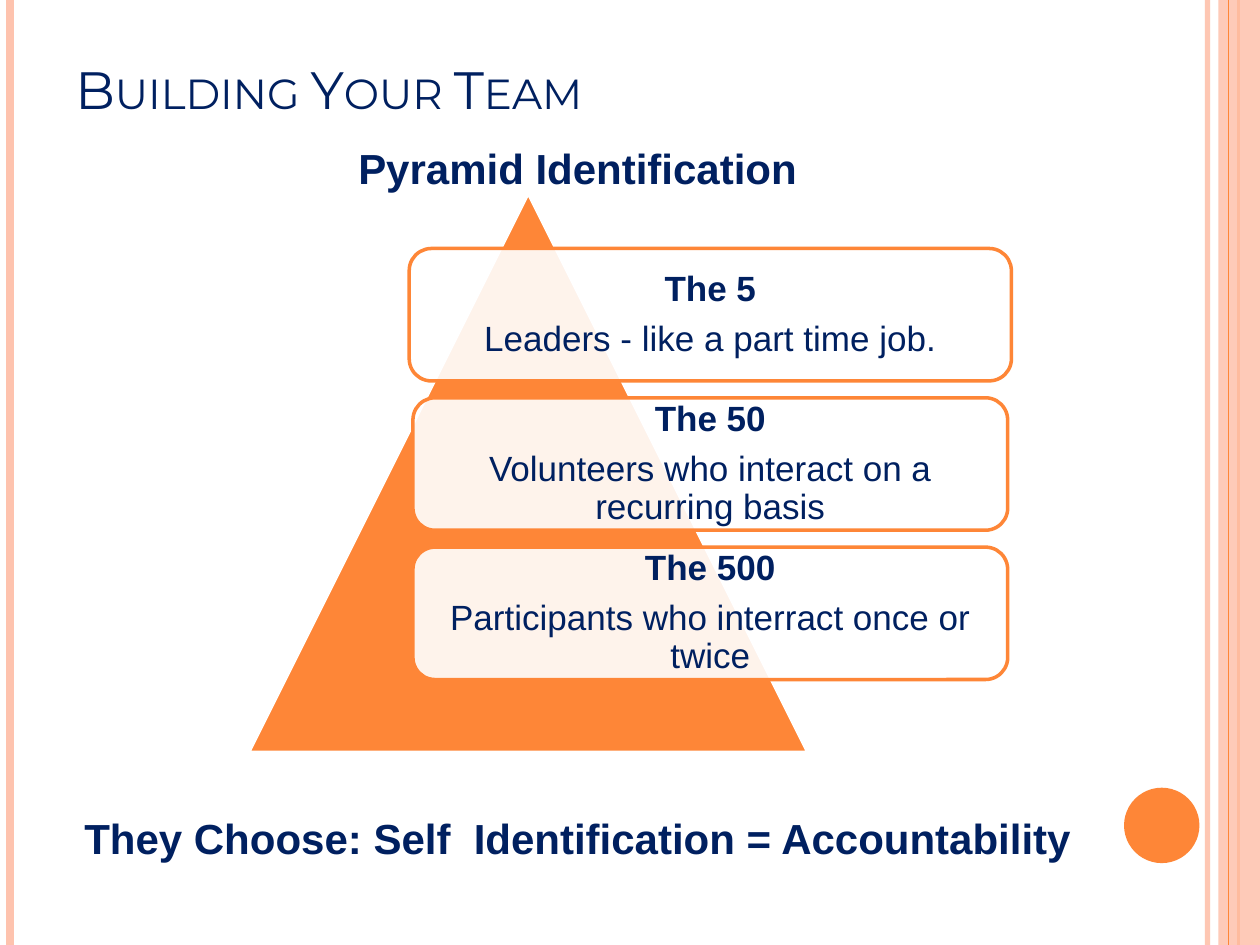
from lxml.etree import SubElement
from pptx import Presentation
from pptx.dml.color import RGBColor
from pptx.enum.shapes import MSO_CONNECTOR, MSO_SHAPE
from pptx.enum.text import MSO_ANCHOR, PP_ALIGN
from pptx.oxml.ns import qn
from pptx.util import Cm, Pt

NAVY, ORANGE, PEACH, WHITE = "002060", "FE8637", "FEC3AE", "FFFFFF"
TALL = 19.05
RULES = [
    (24.34, PEACH, 3, 93),
    (0.21, PEACH, 4.5, 100),
    (24.97, ORANGE, 1.5, 100),
    (24.77, ORANGE, 0.75, 100),
]
LEVELS = [
    ("The 5", "Leaders - like a part time job.", 12.14),
    ("The 50", "Volunteers who interact on a recurring basis", 11.99),
    ("The 500", "Participants who interract once or twice", 11.99),
]


def paint(fill, color, alpha=100):
    """Make a fill solid in a hex colour with an opacity in percent."""
    fill.solid()
    fill.fore_color.rgb = RGBColor.from_string(color)
    if alpha < 100:
        for node in fill._xPr.iter(qn("a:srgbClr")):
            SubElement(node, qn("a:alpha")).set("val", str(alpha * 1000))


def add_rule(slide, left, color, width, alpha):
    """Draw a vertical line over the full slide height."""
    rule = slide.shapes.add_connector(
        MSO_CONNECTOR.STRAIGHT, Cm(left), Cm(0), Cm(left), Cm(TALL))
    rule.line.width = Pt(width)
    paint(rule.line.fill, color, alpha)
    SubElement(rule._element.spPr, qn("a:effectLst"))


def add_form(slide, kind, box, color, alpha=100, edge=None):
    """Draw a preset shape with an optional two-point outline."""
    form = slide.shapes.add_shape(kind, *map(Cm, box))
    form.shadow.inherit = False
    paint(form.fill, color, alpha)
    if edge:
        form.line.width = Pt(2)
        paint(form.line.fill, edge)
    else:
        form.line.fill.background()
    return form


def style(para, size, bold=False, face="Arial", align=PP_ALIGN.CENTER):
    """Format a paragraph and its runs."""
    para.alignment = align
    for run in para.runs:
        run.font.size = Pt(size)
        run.font.bold = bold
        run.font.name = face
        run.font.color.rgb = RGBColor.from_string(NAVY)


def add_label(slide, text, box, anchor=MSO_ANCHOR.MIDDLE):
    """Add a wrapped text box and return its paragraph."""
    frame = slide.shapes.add_textbox(*map(Cm, box)).text_frame
    frame.word_wrap = True
    frame.vertical_anchor = anchor
    frame.text = text
    return frame.paragraphs[0]


def add_level(slide, head, note, top, width):
    """Add a rounded card with a bold heading and a note."""
    box = (14.32 - width / 2, top, width, 2.67)
    card = add_form(slide, MSO_SHAPE.ROUNDED_RECTANGLE, box, WHITE, 90, ORANGE)
    frame = card.text_frame
    frame.word_wrap = True
    frame.vertical_anchor = MSO_ANCHOR.MIDDLE
    frame.margin_left = frame.margin_right = Cm(0.2)
    frame.margin_top = frame.margin_bottom = Cm(0.2)
    frame.text = f"{head}\n{note}"
    for para, bold in zip(frame.paragraphs, (True, False)):
        style(para, 20, bold)
        para.line_spacing = 0.9
        para.space_after = Pt(7)


def add_frame(slide):
    """Draw the side bands and the dot."""
    for rule in RULES[:3]:
        add_rule(slide, *rule)
    add_form(slide, MSO_SHAPE.RECTANGLE, (24.56, 0, 0.84, TALL), PEACH, 87)
    add_rule(slide, *RULES[3])
    add_form(slide, MSO_SHAPE.OVAL, (22.66, 15.88, 1.52, 1.52), ORANGE)


def main():
    """Build the slide and save it."""
    deck = Presentation()
    deck.slide_width, deck.slide_height = Cm(25.4), Cm(TALL)
    slide = deck.slides.add_slide(deck.slide_layouts[6])
    add_frame(slide)
    title = add_label(slide, "Building Your Team", (1.27, 0.76, 20.75, 1.78),
                      MSO_ANCHOR.BOTTOM)
    style(title, 30, face="Montserrat", align=PP_ALIGN.LEFT)
    title.runs[0].font._element.set("cap", "small")
    for text, top in (("Pyramid Identification", 2.71),
                      ("They Choose: Self  Identification = Accountability", 16.21)):
        style(add_label(slide, text, (1.27, top, 20.75, 1.35)), 24, True)
    add_form(slide, MSO_SHAPE.ISOSCELES_TRIANGLE, (5.01, 3.89, 11.28, 11.28),
             ORANGE, edge=WHITE)
    for step, (head, note, width) in enumerate(LEVELS):
        add_level(slide, head, note, 5.01 + 3.01 * step, width)
    deck.save("out.pptx")


if __name__ == "__main__":
    main()
